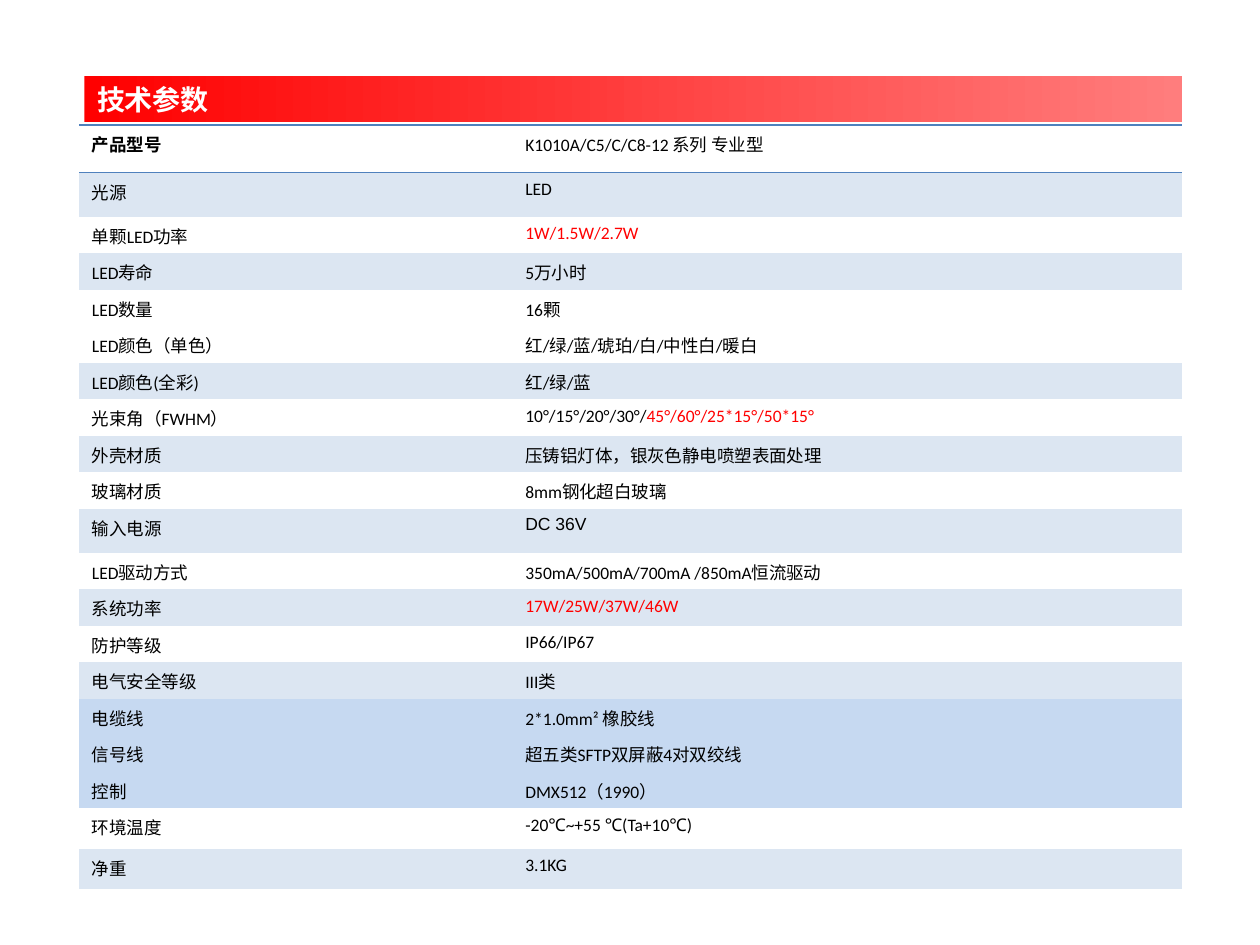
import pptx
import pptx.dml.color
import pptx.enum.text
import pptx.oxml
import pptx.oxml.ns
import pptx.util
from pptx.dml.color import RGBColor
from pptx.util import Inches

BLACK = RGBColor(0, 0, 0)
WHITE = RGBColor(255, 255, 255)
RED = RGBColor(255, 0, 0)
PINK = RGBColor(255, 125, 125)
BLUE = RGBColor(79, 129, 189)
PALE = RGBColor(220, 230, 242)
SKY = RGBColor(198, 217, 241)

NO_STYLE = "{2D5ABB26-0587-4C30-8999-92F81FD0307C}"
CJK = "Noto Sans CJK SC"
ROW_HEIGHT = 0.29
TALL_ROWS = {0: 0.38, 1: 0.35, 10: 0.35, 18: 0.32, 19: 0.32}
CELL_FONTS = {(9, 0): CJK, (10, 1): "Arial"}

PARAMETERS = [
    ("产品型号", "K1010A/C5/C/C8-12 系列 专业型", "", None),
    ("光源", "LED", "", PALE),
    ("单颗LED功率", "", "1W/1.5W/2.7W", None),
    ("LED寿命", "5万小时", "", PALE),
    ("LED数量", "16颗", "", None),
    ("LED颜色（单色）", "红/绿/蓝/琥珀/白/中性白/暖白", "", None),
    ("LED颜色(全彩)", "红/绿/蓝", "", PALE),
    ("光束角（FWHM）", "10°/15°/20°/30°/", "45°/60°/25*15°/50*15°", None),
    ("外壳材质", "压铸铝灯体，银灰色静电喷塑表面处理", "", PALE),
    ("玻璃材质", "8mm钢化超白玻璃", "", None),
    ("输入电源", "DC 36V", "", PALE),
    ("LED驱动方式", "350mA/500mA/700mA /850mA恒流驱动", "", None),
    ("系统功率", "", "17W/25W/37W/46W", PALE),
    ("防护等级", "IP66/IP67", "", None),
    ("电气安全等级", "III类", "", PALE),
    ("电缆线", "2*1.0mm² 橡胶线", "", SKY),
    ("信号线", "超五类SFTP双屏蔽4对双绞线", "", SKY),
    ("控制", "DMX512（1990）", "", SKY),
    ("环境温度", "-20℃~+55 ℃(Ta+10℃)", "", None),
    ("净重", "3.1KG", "", PALE),
]


class SpecificationPage:
    """Holds the style and the current slide, and adds each kind of element."""

    def __init__(self, deck, font="Calibri", size=10):
        self.page = deck.slides.add_slide(deck.slide_layouts[5])
        self.font = font
        self.size = size

    def style(self, para, color, font=None, size=None, bold=False):
        para.font.name = font or self.font
        para.font.size = pptx.util.Pt(size or self.size)
        para.font.bold = bold
        para.font.color.rgb = color

    def title(self, text, left, top, width, height):
        box = self.page.shapes.title
        box.left, box.top = Inches(left), Inches(top)
        box.width, box.height = Inches(width), Inches(height)
        box.fill.gradient()
        box.fill.gradient_angle = 0
        for stop, color in zip(box.fill.gradient_stops, (RED, PINK)):
            stop.color.rgb = color
        frame = box.text_frame
        frame.text = text
        frame.auto_size = pptx.enum.text.MSO_AUTO_SIZE.NONE
        frame.vertical_anchor = pptx.enum.text.MSO_ANCHOR.MIDDLE
        para = frame.paragraphs[0]
        para.alignment = pptx.enum.text.PP_ALIGN.LEFT
        self.style(para, WHITE, CJK, 16, True)

    def rule(self, cell, side):
        line = pptx.oxml.parse_xml(
            f'<a:{side} {pptx.oxml.ns.nsdecls("a")} w="12700"><a:solidFill>'
            f'<a:srgbClr val="{BLUE}"/></a:solidFill></a:{side}>'
        )
        cell._tc.get_or_add_tcPr().append(line)

    def cell(self, cell, text, red_text, fill, font, bold):
        cell.margin_bottom = Inches(0.03)
        para = cell.text_frame.paragraphs[0]
        if text:
            para.add_run().text = text
        if red_text:
            span = para.add_run()
            span.text = red_text
            if text:
                span.font.color.rgb = RED
        self.style(para, BLACK if text else RED, font, bold=bold)
        if fill is None:
            cell.fill.background()
        else:
            cell.fill.solid()
            cell.fill.fore_color.rgb = fill

    def table(self, rows, left, top, widths):
        heights = [TALL_ROWS.get(i, ROW_HEIGHT) for i in range(len(rows))]
        frame = self.page.shapes.add_table(
            len(rows), len(widths), Inches(left), Inches(top),
            Inches(sum(widths)), Inches(sum(heights)),
        )
        table = frame.table
        table.first_row = table.horz_banding = False
        table._tbl.tblPr.find(pptx.oxml.ns.qn("a:tableStyleId")).text = NO_STYLE
        for column, width in zip(table.columns, widths):
            column.width = Inches(width)
        for row, height in zip(table.rows, heights):
            row.height = Inches(height)
        for cell in table.rows[0].cells:
            self.rule(cell, "lnT")
            self.rule(cell, "lnB")
        for i, (name, value, red_value, fill) in enumerate(rows):
            self.cell(table.cell(i, 0), name, "", fill, CELL_FONTS.get((i, 0)), i == 0)
            self.cell(table.cell(i, 1), value, red_value, fill, CELL_FONTS.get((i, 1)), False)


def main():
    deck = pptx.Presentation()
    deck.slide_width, deck.slide_height = Inches(10), Inches(7.5)
    page = SpecificationPage(deck)
    page.title("技术参数", 0.67, 0.6, 8.71, 0.37)
    page.table(PARAMETERS, 0.63, 0.99, (3.44, 5.31))
    deck.save("out.pptx")


if __name__ == "__main__":
    main()
